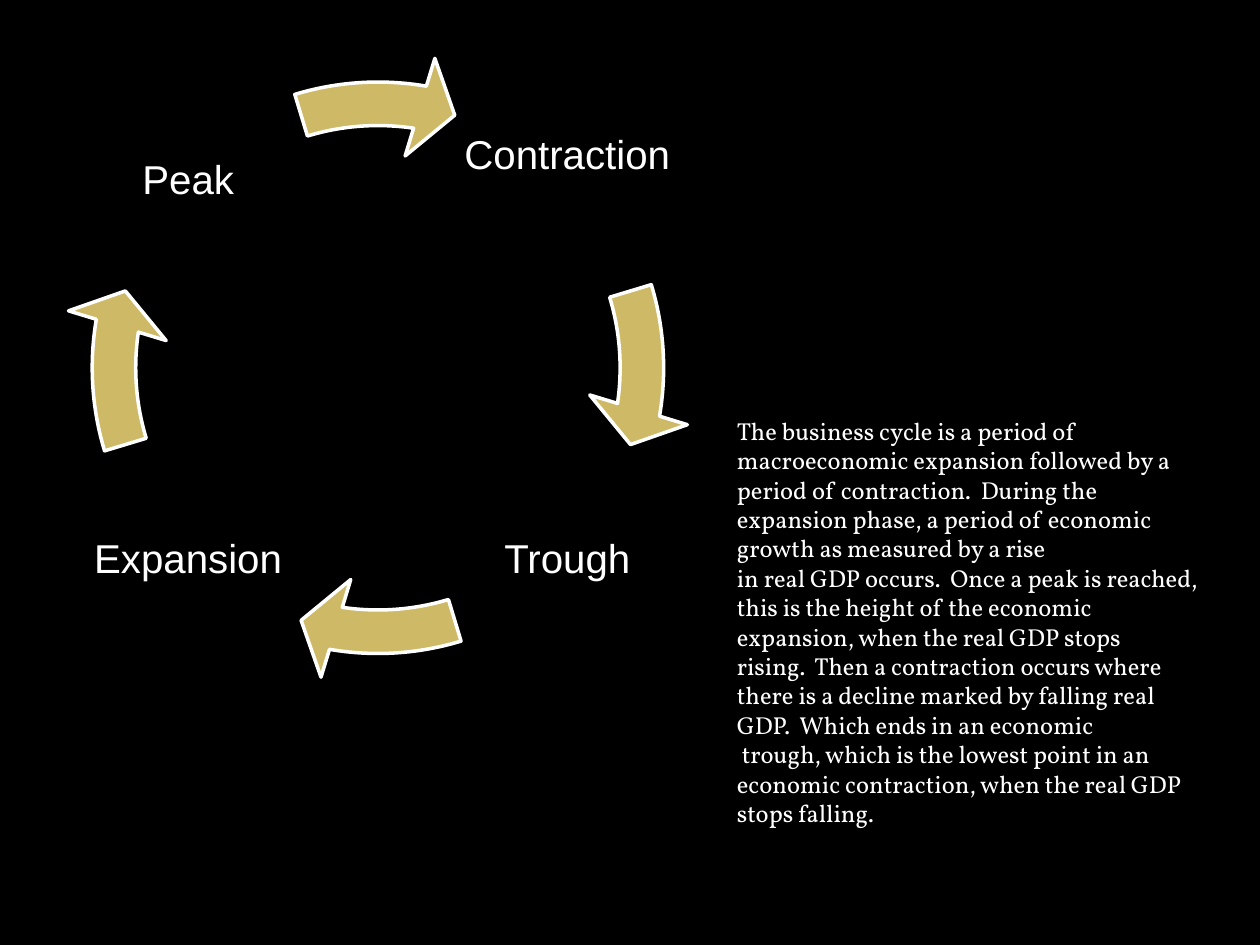
from pptx import Presentation
from pptx.dml.color import RGBColor
from pptx.enum.shapes import MSO_SHAPE
from pptx.enum.text import MSO_ANCHOR, MSO_AUTO_SIZE, PP_ALIGN
from pptx.util import Pt

BLACK = RGBColor(0x00, 0x00, 0x00)
WHITE = RGBColor(0xFF, 0xFF, 0xFF)
GOLD = RGBColor(0xCE, 0xB9, 0x66)
CIRCULAR_ARROW = MSO_SHAPE.CIRCULAR_ARROW
MIDDLE = MSO_ANCHOR.MIDDLE
CENTER = PP_ALIGN.CENTER
FIT_SHAPE = MSO_AUTO_SIZE.SHAPE_TO_FIT_TEXT

# Cycle geometry, in points
LEFT, RIGHT, TOP, BOTTOM = 43.9, 260.6, 38.2, 254.9
PHASE_SIZE = 127.4
PHASE_INSET = 2.3
RING_LEFT, RING_TOP, RING_SIZE = 36, 30.2, 360

# Arrow angles as adjustment values, where 216 is a full turn
FULL_TURN = 216
QUARTER_TURN = FULL_TURN / 4
HEAD_ANGLE, TAIL_ANGLE = 5.5, 205.85

# Phase, left, top, extra bottom inset that lifts the label
PHASES = [
    ("Contraction", RIGHT, TOP, 28.6),
    ("Trough", RIGHT, BOTTOM, 0),
    ("Expansion", LEFT, BOTTOM, 0),
    ("Peak", LEFT, TOP, 0),
]

EXPLANATION = [
    "The business cycle is a period of macroeconomic expansion followed by a "
    "period of contraction.  During the expansion phase, a period of economic "
    "growth as measured by a rise",
    "in real GDP occurs.  Once a peak is reached, this is the height of the "
    "economic expansion, when the real GDP stops",
    "rising.  Then a contraction occurs where there is a decline marked by "
    "falling real GDP.  Which ends in an economic",
    " trough, which is the lowest point in an economic contraction, when the "
    "real GDP stops falling.",
]


def add_text(para, text, font_name, size):
    span = para.add_run()
    span.text = text
    span.font.name = font_name
    span.font.size = Pt(size)
    span.font.color.rgb = WHITE


deck = Presentation()
deck.slide_width, deck.slide_height = Pt(720), Pt(540)
slide = deck.slides.add_slide(deck.slide_layouts[6])
slide.background.fill.solid()
slide.background.fill.fore_color.rgb = BLACK

# Business cycle: each phase label is followed by the arrow that leaves it
cycle = slide.shapes.add_group_shape()
for step, (phase, left, top, lift) in enumerate(PHASES):
    box = cycle.shapes.add_textbox(Pt(left), Pt(top), Pt(PHASE_SIZE), Pt(PHASE_SIZE))
    frame = box.text_frame
    frame.word_wrap = True
    frame.vertical_anchor = MIDDLE
    frame.margin_left = frame.margin_right = frame.margin_top = Pt(PHASE_INSET)
    frame.margin_bottom = Pt(PHASE_INSET + lift)
    para = frame.paragraphs[0]
    para.alignment = CENTER
    add_text(para, phase, "Arial", 23)

    arrow = cycle.shapes.add_shape(
        CIRCULAR_ARROW, Pt(RING_LEFT), Pt(RING_TOP), Pt(RING_SIZE), Pt(RING_SIZE))
    turn = step * QUARTER_TURN
    angles = (HEAD_ANGLE + turn, (TAIL_ANGLE + turn) % FULL_TURN)
    for index, value in enumerate((0.069, 4.65, *angles, 0.081)):
        arrow.adjustments[index] = value
    arrow.shadow.inherit = False
    arrow.fill.solid()
    arrow.fill.fore_color.rgb = GOLD
    arrow.line.color.rgb = WHITE
    arrow.line.width = Pt(2)

# Explanation
box = slide.shapes.add_textbox(Pt(414), Pt(234), Pt(283.7), Pt(258.5))
frame = box.text_frame
frame.word_wrap = True
frame.auto_size = FIT_SHAPE
for index, text in enumerate(EXPLANATION):
    para = frame.add_paragraph() if index else frame.paragraphs[0]
    add_text(para, text, "Vollkorn", 14)

deck.save("out.pptx")
